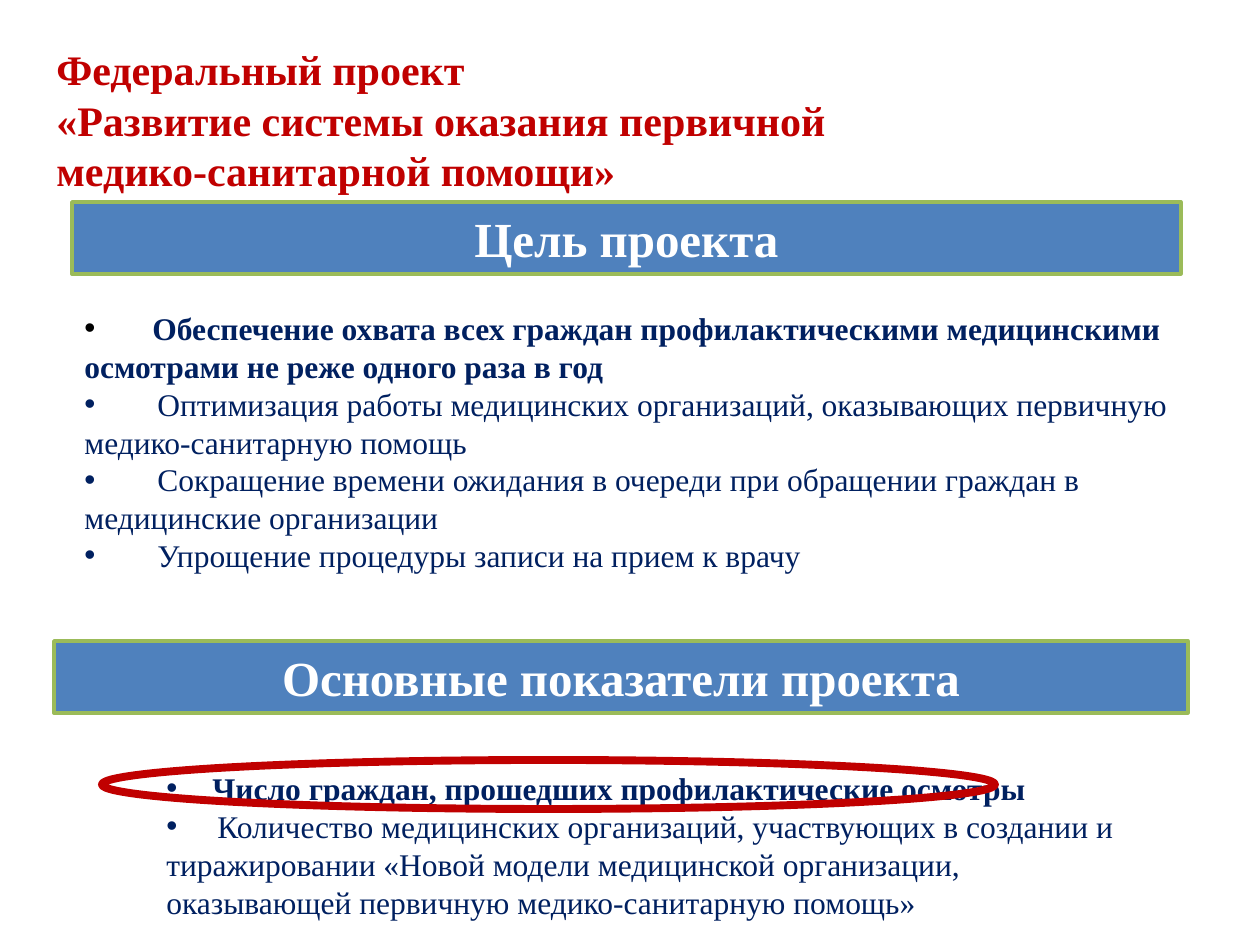
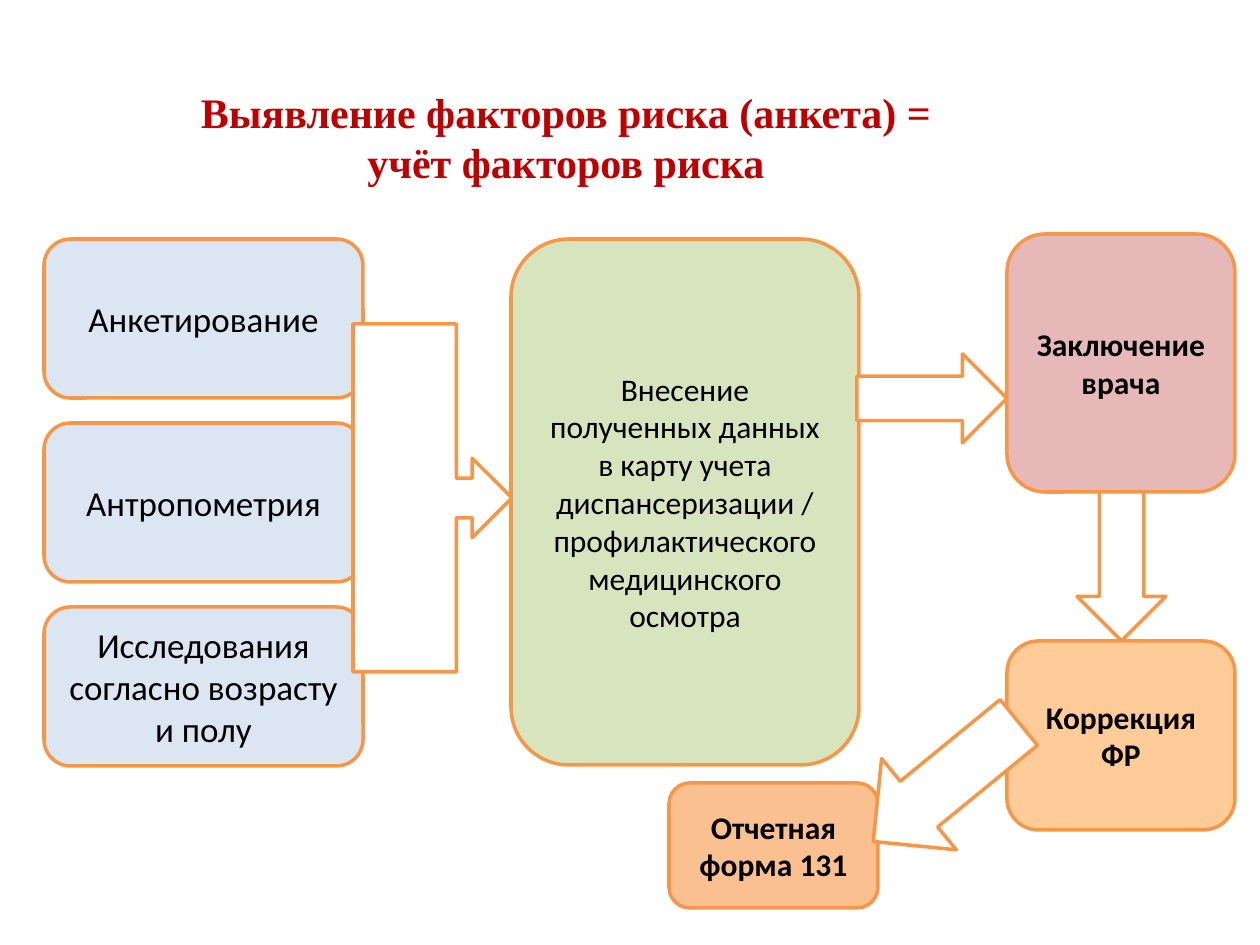
from dataclasses import dataclass

from lxml import etree
from pptx import Presentation
from pptx.dml.color import RGBColor
from pptx.enum.shapes import MSO_SHAPE
from pptx.enum.text import MSO_ANCHOR, PP_ALIGN
from pptx.oxml.ns import qn
from pptx.util import Pt

RECT = MSO_SHAPE.RECTANGLE
ROUND = MSO_SHAPE.ROUNDED_RECTANGLE
OVAL = MSO_SHAPE.OVAL
ARROW = MSO_SHAPE.RIGHT_ARROW
CALLOUT = MSO_SHAPE.RIGHT_ARROW_CALLOUT
TOP, MIDDLE = MSO_ANCHOR.TOP, MSO_ANCHOR.MIDDLE
LEFT, CENTER = PP_ALIGN.LEFT, PP_ALIGN.CENTER
EMU_PER_PX = 914400 / 126


@dataclass(frozen=True)
class Theme:
    serif: str = "Times New Roman"
    sans: str = "Calibri"
    red: str = "C00000"
    navy: str = "002060"
    black: str = "000000"
    white: str = "FFFFFF"
    band: str = "4F81BD"
    band_line: str = "9BBB59"
    flow_line: str = "F79646"
    source: str = "DCE6F2"
    record: str = "D7E4BD"
    verdict: str = "E6B9B8"
    correction: str = "FFCC99"
    report: str = "FAC090"
    title_size: int = 24
    band_size: int = 28
    source_size: int = 20
    body_size: int = 18
    line: float = 2
    ring_line: float = 4.5


T = Theme()


def px(*values):
    return [round(v * EMU_PER_PX) for v in values]


def rgb(color):
    return RGBColor.from_string(color)


def style(p, font, size, color, bold=False, align=LEFT):
    p.alignment = align
    for r in p.runs:
        r.font.name = font
        r.font.size = Pt(size)
        r.font.bold = bold
        r.font.color.rgb = rgb(color)


def add_text_box(slide, box, anchor=TOP):
    tf = slide.shapes.add_textbox(*px(*box)).text_frame
    tf.word_wrap = True
    tf.vertical_anchor = anchor
    return tf


def add_title(slide, text, box, align=LEFT):
    tf = add_text_box(slide, box, MIDDLE)
    p = tf.paragraphs[0]
    p.text = text
    style(p, T.serif, T.title_size, T.red, True, align)


def add_figure(slide, kind, box, fill, line, width=T.line, rotation=0):
    sp = slide.shapes.add_shape(kind, *px(*box))
    sp.shadow.inherit = False
    sp.rotation = rotation
    if fill:
        sp.fill.solid()
        sp.fill.fore_color.rgb = rgb(fill)
    else:
        sp.fill.background()
    sp.line.color.rgb = rgb(line)
    sp.line.width = Pt(width)
    return sp


def add_band(slide, text, box):
    sp = add_figure(slide, RECT, box, T.band, T.band_line)
    tf = sp.text_frame
    tf.text = text
    tf.vertical_anchor = TOP
    style(tf.paragraphs[0], T.serif, T.band_size, T.white, True, CENTER)


def add_card(slide, text, box, fill, size=T.body_size, bold=False):
    tf = add_figure(slide, ROUND, box, fill, T.flow_line).text_frame
    tf.text = text
    tf.word_wrap = True
    tf.vertical_anchor = MIDDLE
    style(tf.paragraphs[0], T.sans, size, T.black, bold, CENTER)


def add_arrow(slide, box, rotation=0, kind=ARROW):
    add_figure(slide, kind, box, T.white, T.flow_line, rotation=rotation)


def set_bullet(p, color, stop):
    pPr = p._p.get_or_add_pPr()
    pPr.set("marL", "0")
    pPr.set("indent", "0")
    clr = etree.SubElement(pPr, qn("a:buClr"))
    etree.SubElement(clr, qn("a:srgbClr"), val=color)
    etree.SubElement(pPr, qn("a:buFont"), typeface="Arial")
    etree.SubElement(pPr, qn("a:buChar"), char="•")
    tabs = etree.SubElement(pPr, qn("a:tabLst"))
    etree.SubElement(tabs, qn("a:tab"), pos=str(px(stop)[0]), algn="l")


def add_bullets(slide, items, box, stop, first_color=T.navy):
    tf = add_text_box(slide, box)
    for i, item in enumerate(items):
        lead = i == 0
        p = tf.paragraphs[0] if lead else tf.add_paragraph()
        p.text = "\t" + item
        set_bullet(p, first_color if lead else T.navy, stop if lead else stop + 5)
        style(p, T.serif, T.body_size, T.navy, lead)


def build_project(slide):
    add_title(slide, "Федеральный проект\v«Развитие системы оказания первичной "
              "медико-санитарной помощи»", (44, 28, 883, 183))
    add_band(slide, "Цель проекта", (72, 202, 1109, 72))
    add_bullets(slide, [
        "Обеспечение охвата всех граждан профилактическими медицинскими "
        "осмотрами не реже одного раза в год",
        "Оптимизация работы медицинских организаций, оказывающих первичную "
        "медико-санитарную помощь",
        "Сокращение времени ожидания в очереди при обращении граждан в "
        "медицинские организации",
        "Упрощение процедуры записи на прием к врачу",
    ], (72, 303, 1116, 280), 68, T.black)
    add_band(slide, "Основные показатели проекта", (54, 641, 1134, 72))
    add_bullets(slide, [
        "Число граждан, прошедших профилактические осмотры",
        "Количество медицинских организаций, участвующих в создании и "
        "тиражировании «Новой модели медицинской организации, оказывающей "
        "первичную медико-санитарную помощь»",
    ], (154, 763, 990, 165), 46)
    add_figure(slide, OVAL, (102, 760, 893, 49), None, T.red, T.ring_line)


def build_risk_flow(slide):
    add_title(slide, "Выявление факторов риска (анкета) = учёт факторов риска",
              (144, 58, 844, 157), CENTER)
    sources = ["Анкетирование", "Антропометрия",
               "Исследования согласно возрасту и полу"]
    for i, text in enumerate(sources):
        add_card(slide, text, (44, 239 + 184 * i, 319, 159), T.source, T.source_size)
    add_arrow(slide, (353, 324, 159, 348), kind=CALLOUT)
    add_card(slide, "Внесение полученных данных в карту учета диспансеризации / "
             "профилактического медицинского осмотра", (511, 239, 348, 526), T.record)
    add_arrow(slide, (857, 354, 150, 89))
    add_card(slide, "Заключение врача", (1007, 234, 228, 258), T.verdict, bold=True)
    add_arrow(slide, (1047, 522, 149, 89), 90)
    add_card(slide, "Коррекция ФР", (1007, 641, 228, 189), T.correction, bold=True)
    add_card(slide, "Отчетная форма 131", (669, 783, 209, 125), T.report, bold=True)
    add_arrow(slide, (852, 723, 188, 118), 140.7)


def main():
    prs = Presentation()
    prs.slide_width, prs.slide_height = px(1260, 945)
    for build in (build_project, build_risk_flow):
        build(prs.slides.add_slide(prs.slide_layouts[6]))
    prs.save("out.pptx")


if __name__ == "__main__":
    main()
